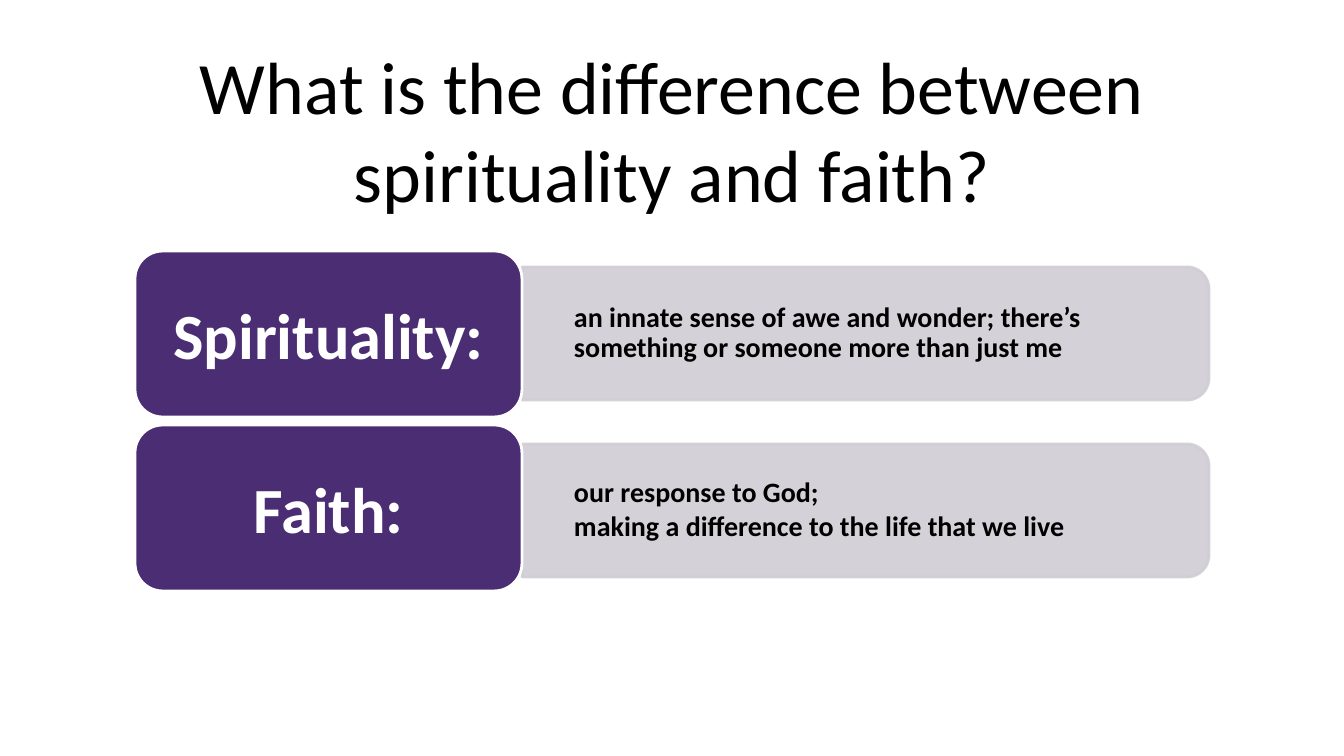
import math

from lxml import etree
from pptx import Presentation, util as u
from pptx.dml.color import RGBColor
from pptx.enum import shapes, text
from pptx.oxml.ns import qn

# Content: label, label top, body top, body lines
TITLE = "What is the difference between spirituality and faith?"
ROWS = [
    ("Spirituality:", 251, 267,
     ["an innate sense of awe and wonder; there’s something or someone more than just me"]),
    ("Faith:", 425, 444,
     ["our response to God;", "making a difference to the life that we live"]),
]

# Layout in px
PX = 914400 / 100.8
SLIDE_W, SLIDE_H = 1344, 756
LEFT, SPLIT, RIGHT = 135, 522, 1209
TITLE_TOP, TITLE_H = 32, 194
LABEL_H, BODY_H, BODY_RADIUS = 166, 133, 22
ARC_STEPS = 12

BLACK = RGBColor(0x00, 0x00, 0x00)
WHITE = RGBColor(0xFF, 0xFF, 0xFF)
PURPLE = RGBColor(0x4A, 0x2D, 0x72)
GREY = RGBColor(0xD0, 0xCD, 0xD5)

TITLE_FONT = {"name": "Calibri", "size": u.Pt(52.8), "bold": False}
LABEL_FONT = {"name": "Calibri", "size": u.Pt(46), "bold": True}
BODY_FONT = {"name": "Calibri", "size": u.Pt(20), "bold": True}


def px(value):
    return u.Emu(round(value * PX))


def set_all(target, values):
    for name, value in values.items():
        setattr(target, name, value)


def paint(shape, fill, line):
    shape.shadow.inherit = False
    shape.fill.solid()
    shape.fill.fore_color.rgb = fill
    shape.line.color.rgb = line
    shape.line.width = u.Pt(2)


def write(shape, lines, font, color, align, margins, spacing):
    frame = shape.text_frame
    sides = ("margin_left", "margin_top", "margin_right", "margin_bottom")
    set_all(frame, dict(zip(sides, map(px, margins))))
    set_all(frame, {"word_wrap": True, "auto_size": text.MSO_AUTO_SIZE.NONE,
                    "vertical_anchor": text.MSO_ANCHOR.MIDDLE})
    for index, line in enumerate(lines):
        para = frame.add_paragraph() if index else frame.paragraphs[0]
        set_all(para, {"alignment": align, "line_spacing": spacing,
                       "space_before": u.Pt(3 if index else 0)})
        span = para.add_run()
        span.text = line
        set_all(span.font, font)
        span.font.color.rgb = color


def add_body(page, top):
    """Rectangle with rounded corners on its right side only."""
    corners = [(top + BODY_RADIUS, -90), (top + BODY_H - BODY_RADIUS, 0)]
    points = [(SPLIT, top)]
    for center_y, start in corners:
        for step in range(ARC_STEPS + 1):
            angle = math.radians(start + 90 * step / ARC_STEPS)
            points.append((RIGHT - BODY_RADIUS + BODY_RADIUS * math.cos(angle),
                           center_y + BODY_RADIUS * math.sin(angle)))
    points.append((SPLIT, top + BODY_H))
    outline = [(px(x), px(y)) for x, y in points]
    builder = page.shapes.build_freeform(*outline[0])
    builder.add_line_segments(outline[1:], close=True)
    body = builder.convert_to_shape()
    paint(body, GREY, GREY)
    for color in body._element.spPr.iter(qn("a:srgbClr")):
        etree.SubElement(color, qn("a:alpha"), val="90000")
    return body


def main():
    deck = Presentation()
    set_all(deck, {"slide_width": px(SLIDE_W), "slide_height": px(SLIDE_H)})
    page = deck.slides.add_slide(deck.slide_layouts[5])

    # Title
    title = page.shapes.title
    set_all(title, {"left": px(LEFT), "top": px(TITLE_TOP),
                    "width": px(RIGHT - LEFT), "height": px(TITLE_H)})
    write(title, [TITLE], TITLE_FONT, BLACK, text.PP_ALIGN.CENTER, (10, 5, 10, 5), 1.0)

    # Definition rows
    for label_text, label_top, body_top, lines in ROWS:
        body = add_body(page, body_top)
        write(body, lines, BODY_FONT, BLACK, text.PP_ALIGN.LEFT, (52, 20, 34, 20), 0.9)

        label = page.shapes.add_shape(
            shapes.MSO_SHAPE.ROUNDED_RECTANGLE,
            px(LEFT), px(label_top), px(SPLIT - LEFT), px(LABEL_H))
        paint(label, PURPLE, WHITE)
        write(label, [label_text], LABEL_FONT, WHITE, text.PP_ALIGN.CENTER,
              (27, 18, 27, 18), 1.0)

    deck.save("out.pptx")


if __name__ == "__main__":
    main()
